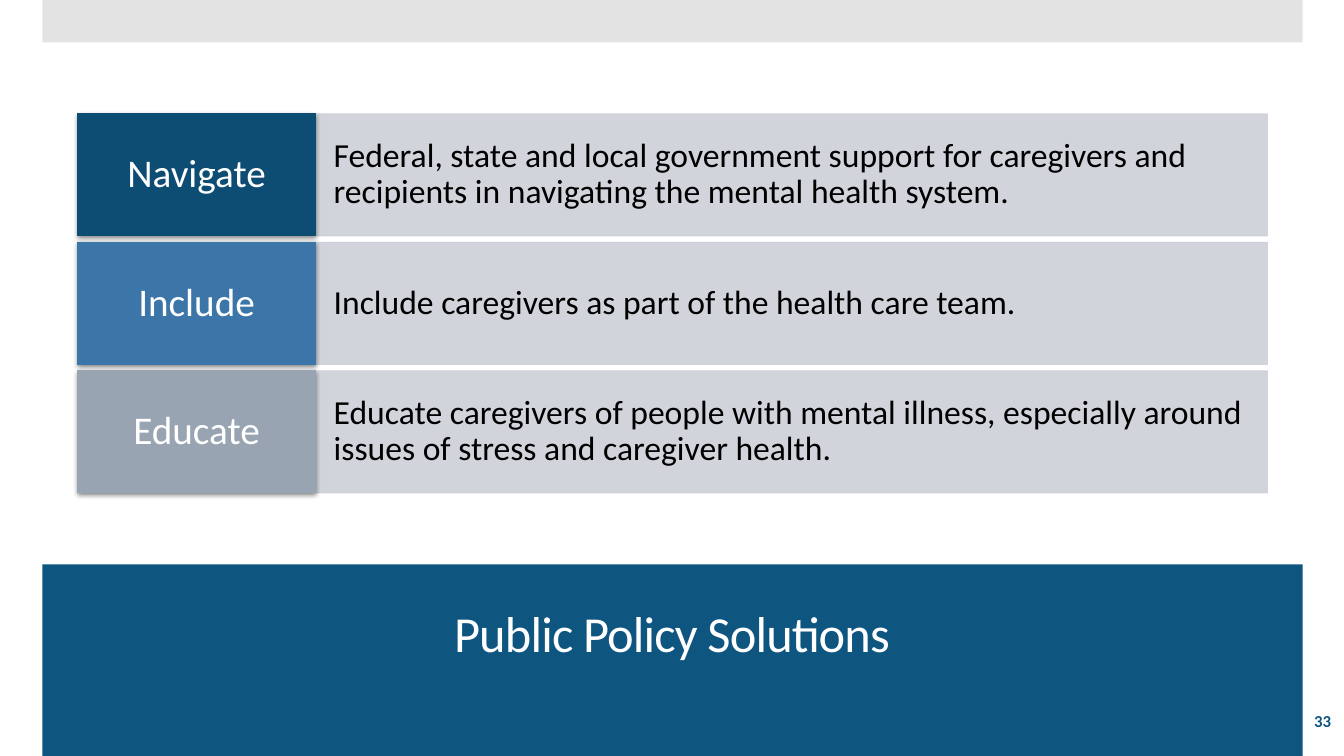
import pptx
import pptx.util
import pptx.dml.color
import pptx.enum.shapes
import pptx.enum.text
import pptx.oxml
import pptx.oxml.ns

Inches = pptx.util.Inches
Pt = pptx.util.Pt
ALIGN = pptx.enum.text.PP_ALIGN
NS = pptx.oxml.ns.nsdecls("a")

BLUE, GREY, PALE = "0E5580", "C8C8C8", "CCD1D8"
WHITE, BLACK = "FFFFFF", "000000"

ROWS = [
    ("Navigate", "0D4D74", "Federal, state and local government support for "
     "caregivers and recipients in navigating the mental health system."),
    ("Include", "3C76A9",
     "Include caregivers as part of the health care team."),
    ("Educate", "98A4B2", "Educate caregivers of people with mental illness, "
     "especially around issues of stress and caregiver health."),
]
TOP, STEP, HIGH = 1.13, 1.275, 1.21
LEFT, TAG, BODY = 0.77, 2.36, 9.44


def color(code):
    return pptx.dml.color.RGBColor.from_string(code)


def fade(fill, alpha):
    """Make a solid fill partly see-through; alpha is in percent."""
    tone = fill._xPr.find(".//" + pptx.oxml.ns.qn("a:srgbClr"))
    tone.append(pptx.oxml.parse_xml(f'<a:alpha {NS} val="{alpha * 1000}"/>'))


def shade(shape):
    """Give a shape a soft shadow straight below it."""
    shape.shadow.inherit = False
    effects = shape._element.spPr.find(pptx.oxml.ns.qn("a:effectLst"))
    effects.append(pptx.oxml.parse_xml(
        f'<a:outerShdw {NS} blurRad="{Pt(3.5)}" dist="{Pt(1.1)}" '
        'dir="5400000" rotWithShape="0"><a:srgbClr val="000000">'
        '<a:alpha val="45000"/></a:srgbClr></a:outerShdw>'))


def block(slide, x, y, w, h, fill, alpha=100, line=False):
    shape = slide.shapes.add_shape(
        pptx.enum.shapes.MSO_SHAPE.RECTANGLE,
        Inches(x), Inches(y), Inches(w), Inches(h))
    shape.shadow.inherit = False
    shape.fill.solid()
    shape.fill.fore_color.rgb = color(fill)
    if line:
        shape.line.color.rgb = color(fill)
        shape.line.width = Pt(0.75)
    else:
        shape.line.fill.background()
    if alpha < 100:
        fade(shape.fill, alpha)
        if line:
            fade(shape.line.fill, alpha)
    return shape


def write(shape, text, size, tint, align=ALIGN.CENTER, bold=False,
          side=0.1, space=0.9, track=0):
    frame = shape.text_frame
    frame.word_wrap = True
    frame.vertical_anchor = pptx.enum.text.MSO_ANCHOR.MIDDLE
    frame.margin_left = frame.margin_right = Inches(side)
    para = frame.paragraphs[0]
    para.alignment = align
    para.line_spacing = space
    run = para.add_run()
    run.text = text
    run.font.name = "Calibri"
    run.font.size = Pt(size)
    run.font.bold = bold
    run.font.color.rgb = color(tint)
    if track:
        run.font._element.set("spc", str(round(track * 100)))


def label(slide, x, y, w, h, text, size, tint, **style):
    box = slide.shapes.add_textbox(Inches(x), Inches(y), Inches(w), Inches(h))
    write(box, text, size, tint, **style)


def row(slide, y, name, fill, text):
    body = block(slide, LEFT + TAG, y, BODY, HIGH, PALE, alpha=90, line=True)
    write(body, text, 24, BLACK, align=ALIGN.LEFT, side=0.18)
    tag = block(slide, LEFT, y, TAG, HIGH, fill, line=True)
    shade(tag)
    write(tag, name, 28, WHITE, side=0.12)


def main():
    deck = pptx.Presentation()
    deck.slide_width = Inches(13.33)
    deck.slide_height = Inches(7.5)
    slide = deck.slides.add_slide(deck.slide_layouts[6])

    # Bands at the foot and the head
    block(slide, 0.42, 5.6, 12.5, 1.9, BLUE)
    block(slide, 0.42, 0, 12.5, 0.42, GREY, alpha=50)

    # Policy rows
    for i, (name, fill, text) in enumerate(ROWS):
        row(slide, TOP + i * STEP, name, fill, text)

    # Title and page number
    label(slide, 0.7, 5.75, 11.93, 1.12, "Public Policy Solutions", 36, WHITE,
          track=-0.6)
    label(slide, 12.7, 6.95, 0.6, 0.4, "33", 12, BLUE, align=ALIGN.RIGHT,
          bold=True, space=1.0)

    deck.save("out.pptx")


if __name__ == "__main__":
    main()
